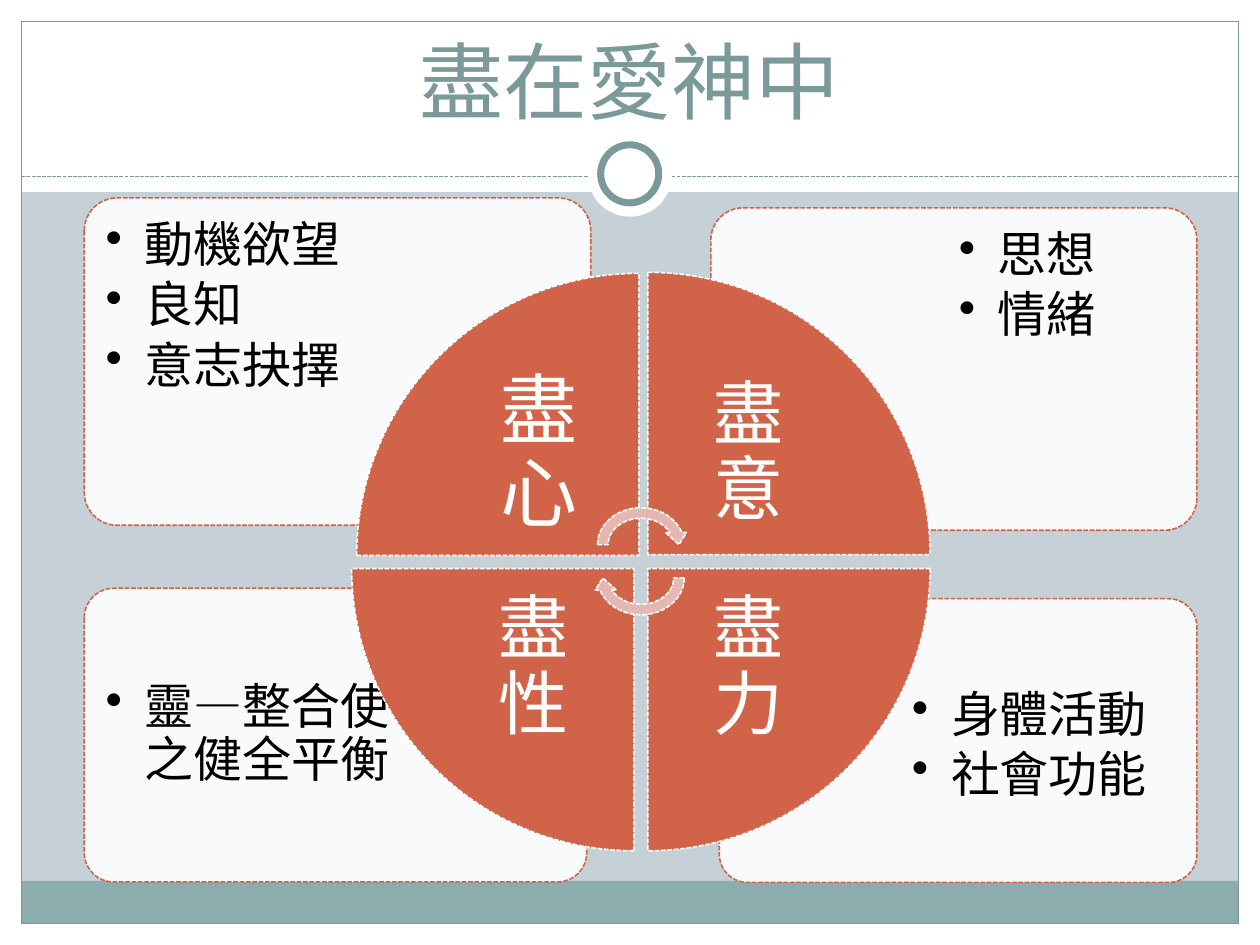
from dataclasses import dataclass

from lxml import etree
from pptx import Presentation
from pptx import util as u
from pptx.dml.color import RGBColor
from pptx.enum import dml, shapes, text
from pptx.oxml.ns import qn

FONT = "Roboto"
COLORS = {
    "background": "C5D1D7",
    "white": "FFFFFF",
    "black": "000000",
    "frame": "7C999A",
    "footer": "8CADAE",
    "accent": "D16349",
    "cycle": "E5B7B1",
}
SLIDE_W, SLIDE_H = 25.4, 19.05
MARGIN = 0.43
WEDGE, LABEL = 5.69, 4.04
Box = tuple[float, float, float, float]


@dataclass(frozen=True)
class Card:
    outline: Box
    body: Box
    points: tuple[str, ...]
    align: text.PP_ALIGN


@dataclass(frozen=True)
class Quadrant:
    label: str
    left: float
    top: float
    rotation: int
    size: int = 40


CARDS = (
    Card((14.5, 12.07, 9.63, 5.72), (17.5, 13.61, 6.5, 4.04),
         ("身體活動", "社會功能"), text.PP_ALIGN.CENTER),
    Card((1.7, 11.86, 10.13, 5.92), (1.83, 13.46, 6.83, 4.17),
         ("靈—整合使之健全平衡",), text.PP_ALIGN.LEFT),
    Card((14.33, 4.19, 9.8, 6.5), (17.42, 4.34, 6.58, 4.6),
         ("思想", "情緒"), text.PP_ALIGN.CENTER),
    Card((1.7, 3.99, 10.21, 6.6), (1.83, 4.14, 6.86, 4.65),
         ("動機欲望", "良知", "意志抉擇"), text.PP_ALIGN.LEFT),
)
QUADRANTS = (
    Quadrant("盡心", 7.19, 5.51, 0, 44),
    Quadrant("盡意", 13.06, 5.49, 90),
    Quadrant("盡力", 13.06, 11.46, 180),
    Quadrant("盡性", 7.09, 11.46, 270),
)


def rgb(name: str) -> RGBColor:
    return RGBColor.from_string(COLORS[name])


def style_line(line, color: str, width: float, dashed: bool) -> None:
    line.color.rgb = rgb(color)
    line.width = u.Pt(width)
    if dashed:
        line.dash_style = dml.MSO_LINE.SQUARE_DOT


def add_figure(slide, kind, box: Box, fill: str | None = None,
               line: str | None = None, width: float = 0.9,
               dashed: bool = True, rotation: int = 0):
    figure = slide.shapes.add_shape(kind, *map(u.Cm, box))
    figure.shadow.inherit = False
    figure.rotation = rotation
    if fill:
        figure.fill.solid()
        figure.fill.fore_color.rgb = rgb(fill)
    else:
        figure.fill.background()
    if line:
        style_line(figure.line, line, width, dashed)
    else:
        figure.line.fill.background()
    return figure


def add_text(slide, box: Box, lines: tuple[str, ...], size: int, color: str,
             inset: float, align, anchor, bulleted: bool = False) -> None:
    frame = slide.shapes.add_textbox(*map(u.Cm, box)).text_frame
    frame.word_wrap = True
    frame.vertical_anchor = anchor
    frame.margin_left = frame.margin_right = u.Cm(inset)
    frame.margin_top = frame.margin_bottom = u.Cm(inset)
    frame.text = "\n".join(lines)
    for paragraph in frame.paragraphs:
        paragraph.alignment = align
        paragraph.line_spacing = 0.9
        font = paragraph.runs[0].font
        font.name, font.size = FONT, u.Pt(size)
        font.color.rgb = rgb(color)
        if bulleted:
            paragraph.space_after = u.Pt(size * 0.15)
            properties = paragraph._p.get_or_add_pPr()
            properties.set("marL", str(u.Cm(0.79)))
            properties.set("indent", str(u.Cm(-0.79)))
            etree.SubElement(properties, qn("a:buChar"), char="•")


def add_backdrop(slide) -> None:
    slide.background.fill.solid()
    slide.background.fill.fore_color.rgb = rgb("background")
    rect, oval = shapes.MSO_SHAPE.RECTANGLE, shapes.MSO_SHAPE.OVAL
    inner_w = SLIDE_W - 2 * MARGIN
    for border in (
        (0, SLIDE_H - MARGIN, SLIDE_W, MARGIN),
        (0, 0, SLIDE_W, 3.87),
        (0, 0, MARGIN, SLIDE_H),
        (SLIDE_W - MARGIN, 0, MARGIN, SLIDE_H),
    ):
        add_figure(slide, rect, border, "white")
    add_figure(slide, rect, (MARGIN, 17.76, inner_w, 0.86), "footer")
    add_figure(slide, rect, (MARGIN, MARGIN, inner_w, SLIDE_H - 2 * MARGIN),
               line="frame", width=0.75, dashed=False)
    divider = slide.shapes.add_connector(
        shapes.MSO_CONNECTOR.STRAIGHT, u.Cm(MARGIN), u.Cm(3.56),
        u.Cm(SLIDE_W - MARGIN), u.Cm(3.56))
    style_line(divider.line, "frame", 0.75, True)
    etree.SubElement(divider._element.spPr, qn("a:effectLst"))
    add_figure(slide, oval, (11.85, 2.67, 1.7, 1.7), "white")
    add_figure(slide, oval, (12.11, 2.92, 1.17, 1.17), "white", "frame", 4, False)


def add_title(slide, wording: str) -> None:
    title = slide.shapes.title
    title.left, title.top, title.width, title.height = map(
        u.Cm, (0.85, 0.64, 23.7, 2.11))
    frame = title.text_frame
    frame.text = wording
    frame.vertical_anchor = text.MSO_ANCHOR.BOTTOM
    frame.paragraphs[0].alignment = text.PP_ALIGN.CENTER
    font = frame.paragraphs[0].runs[0].font
    font.name, font.size = FONT, u.Pt(48)
    font.color.rgb = rgb("frame")
    slide.shapes._spTree.append(title._element)


def add_card(slide, card: Card) -> None:
    outline = add_figure(slide, shapes.MSO_SHAPE.ROUNDED_RECTANGLE,
                         card.outline, "white", "accent")
    outline.adjustments[0] = 0.1
    tint = outline._element.spPr.find(qn("a:solidFill"))[0]
    etree.SubElement(tint, qn("a:alpha"), val="90000")
    add_text(slide, card.body, card.points, 28, "black", 0.3, card.align,
             text.MSO_ANCHOR.TOP, bulleted=True)


def add_quadrant(slide, quadrant: Quadrant) -> None:
    add_figure(slide, shapes.MSO_SHAPE.PIE_WEDGE,
               (quadrant.left, quadrant.top, WEDGE, WEDGE),
               "accent", "white", rotation=quadrant.rotation)
    shift = WEDGE - LABEL
    left = quadrant.left + shift * (quadrant.rotation in (0, 270))
    top = quadrant.top + shift * (quadrant.rotation in (0, 90))
    add_text(slide, (left, top, LABEL, LABEL), (quadrant.label,),
             quadrant.size, "white", quadrant.size * 0.02,
             text.PP_ALIGN.CENTER, text.MSO_ANCHOR.MIDDLE)


def main() -> None:
    deck = Presentation()
    deck.slide_width, deck.slide_height = u.Cm(SLIDE_W), u.Cm(SLIDE_H)
    slide = deck.slides.add_slide(deck.slide_layouts[5])
    add_backdrop(slide)
    add_title(slide, "盡在愛神中")
    for card in CARDS:
        add_card(slide, card)
    for quadrant in QUADRANTS:
        add_quadrant(slide, quadrant)
    for top, rotation in ((10.13, 0), (10.8, 180)):
        add_figure(slide, shapes.MSO_SHAPE.CIRCULAR_ARROW,
                   (11.94, top, 1.96, 1.7), "cycle", "white", rotation=rotation)
    deck.save("out.pptx")


if __name__ == "__main__":
    main()
